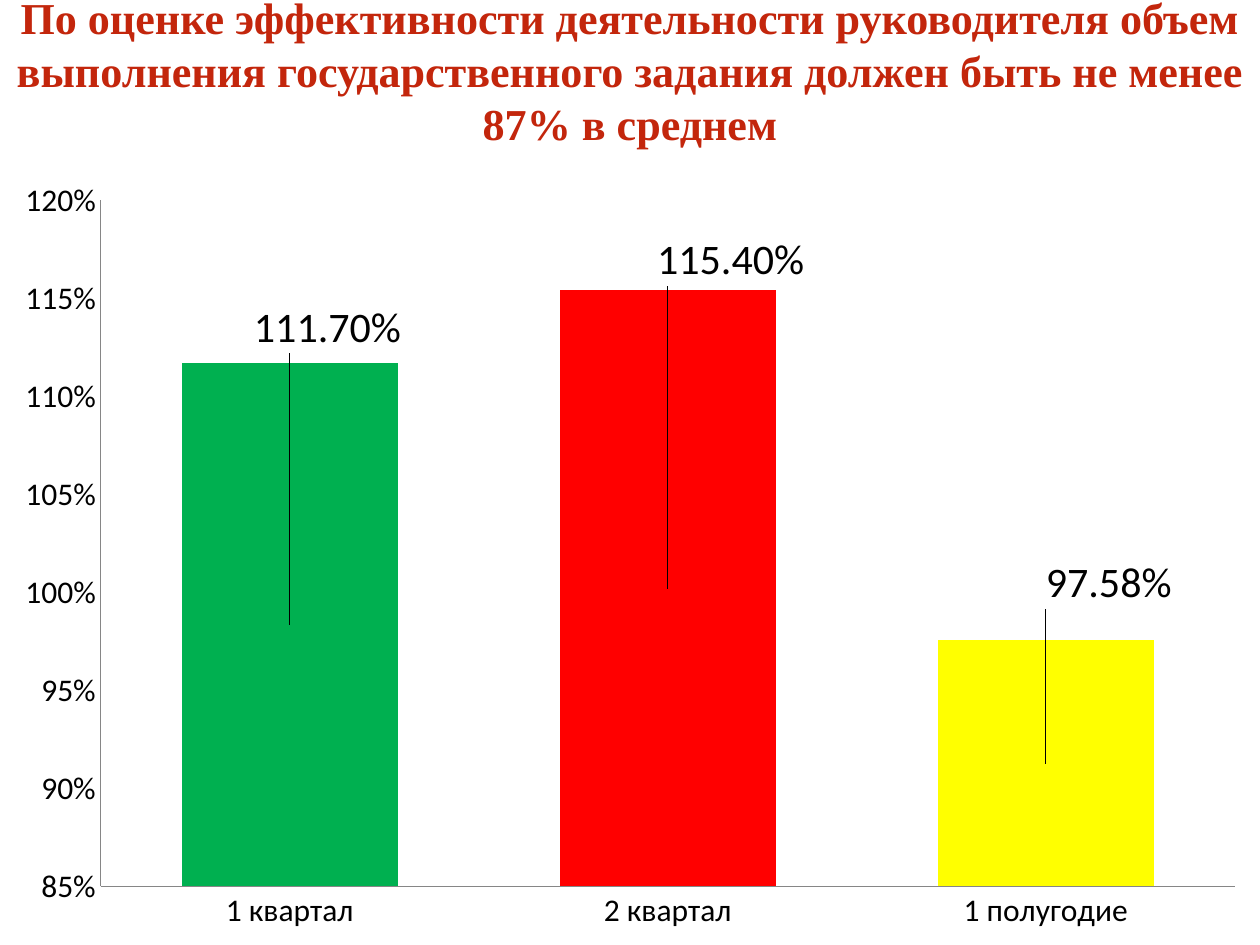
from lxml import etree
from pptx import Presentation
from pptx.chart.data import CategoryChartData
from pptx.dml.color import RGBColor
from pptx.enum.chart import XL_CHART_TYPE, XL_TICK_MARK
from pptx.enum.text import MSO_ANCHOR, PP_ALIGN
from pptx.oxml.ns import qn
from pptx.util import Cm, Pt

STACKED = XL_CHART_TYPE.COLUMN_STACKED
NO_TICK = XL_TICK_MARK.NONE
MIDDLE = MSO_ANCHOR.MIDDLE
CENTER = PP_ALIGN.CENTER

TITLE_RED = RGBColor(0xC3, 0x26, 0x0C)
BLACK = RGBColor(0, 0, 0)
GREY = RGBColor(0x86, 0x86, 0x86)
GREEN = RGBColor(0, 0xB0, 0x50)
RED = RGBColor(0xFF, 0, 0)
YELLOW = RGBColor(0xFF, 0xFF, 0)

TITLE = ("По оценке эффективности деятельности руководителя объем "
         "выполнения государственного задания должен быть не менее "
         "87% в среднем")
QUARTERS = [
    ("1 квартал", 1.117, GREEN, (0.03, -0.38)),
    ("2 квартал", 1.154, RED, (0.05, -0.42)),
    ("1 полугодие", 0.9758, YELLOW, (0.05, -0.23)),
]


def manual_layout(**settings):
    layout = etree.Element(qn("c:layout"))
    manual = etree.SubElement(layout, qn("c:manualLayout"))
    for name, value in settings.items():
        etree.SubElement(manual, qn(f"c:{name}")).set("val", str(value))
    return layout


class SlideBuilder:
    """Holds the style and the current slide and adds its elements."""

    title_font = "Times New Roman"
    chart_font = "Calibri"

    def __init__(self, prs):
        self.slide = prs.slides.add_slide(prs.slide_layouts[5])

    def title(self, text, left, top, width, height):
        sp = self.slide.shapes.title
        sp.left, sp.top, sp.width, sp.height = left, top, width, height
        tf = sp.text_frame
        tf.text = text
        tf.word_wrap = True
        tf.vertical_anchor = MIDDLE
        tf.margin_left = tf.margin_right = tf.margin_top = 0
        tf.margin_bottom = Cm(0.5)
        p = tf.paragraphs[0]
        p.alignment = CENTER
        font = p.runs[0].font
        font.name, font.size, font.bold = self.title_font, Pt(25.2), True
        font.color.rgb = TITLE_RED

    def format_font(self, font, size):
        font.name, font.size = self.chart_font, Pt(size)
        font.color.rgb = BLACK

    def column_chart(self, rows, left, top, width, height):
        data = CategoryChartData(number_format="0.00%")
        data.categories = [row[0] for row in rows]
        data.add_series("Series 1", [row[1] for row in rows])
        chart = self.slide.shapes.add_chart(
            STACKED, left, top, width, height, data).chart
        chart.has_legend = chart.has_title = False
        self.format_font(chart.font, 18)
        for axis in (chart.category_axis, chart.value_axis):
            axis.has_major_gridlines = False
            axis.major_tick_mark = axis.minor_tick_mark = NO_TICK
            axis.format.line.color.rgb = GREY
        axis = chart.value_axis
        axis.minimum_scale, axis.maximum_scale = 0.85, 1.2
        axis.major_unit = 0.05
        axis.tick_labels.number_format = "0%"
        axis.tick_labels.number_format_is_linked = False
        self.place_plot(chart)
        self.format_columns(chart.plots[0], rows)

    def place_plot(self, chart):
        area = chart._chartSpace.chart.plotArea
        for old in area.findall(qn("c:layout")):
            area.remove(old)
        area.insert(0, manual_layout(
            layoutTarget="inner", xMode="edge", yMode="edge",
            x=0.08, y=0.045, w=0.9, h=0.88))

    def format_columns(self, plot, rows):
        plot.gap_width, plot.overlap = 75, 100
        plot.vary_by_categories = False
        series = plot.series[0]
        series.format.fill.solid()
        series.format.fill.fore_color.rgb = YELLOW
        labels = series.data_labels
        labels.show_value = True
        labels.number_format = "0.00%"
        labels.number_format_is_linked = False
        self.format_font(labels.font, 24)
        for i, (_, _, color, _) in enumerate(rows):
            point = series.points[i]
            point.format.fill.solid()
            point.format.fill.fore_color.rgb = color
            self.format_font(point.data_label.font, 24)
        for label, row in zip(labels._element.findall(qn("c:dLbl")), rows):
            x, y = row[3]
            label.insert(1, manual_layout(x=x, y=y))


def main():
    prs = Presentation()
    prs.slide_width, prs.slide_height = Cm(25.4), Cm(19.05)
    builder = SlideBuilder(prs)
    builder.title(TITLE, 0, 0, Cm(25.4), Cm(3.33))
    builder.column_chart(QUARTERS, 0, Cm(3.33), Cm(25.4), Cm(15.72))
    prs.save("out.pptx")


if __name__ == "__main__":
    main()
